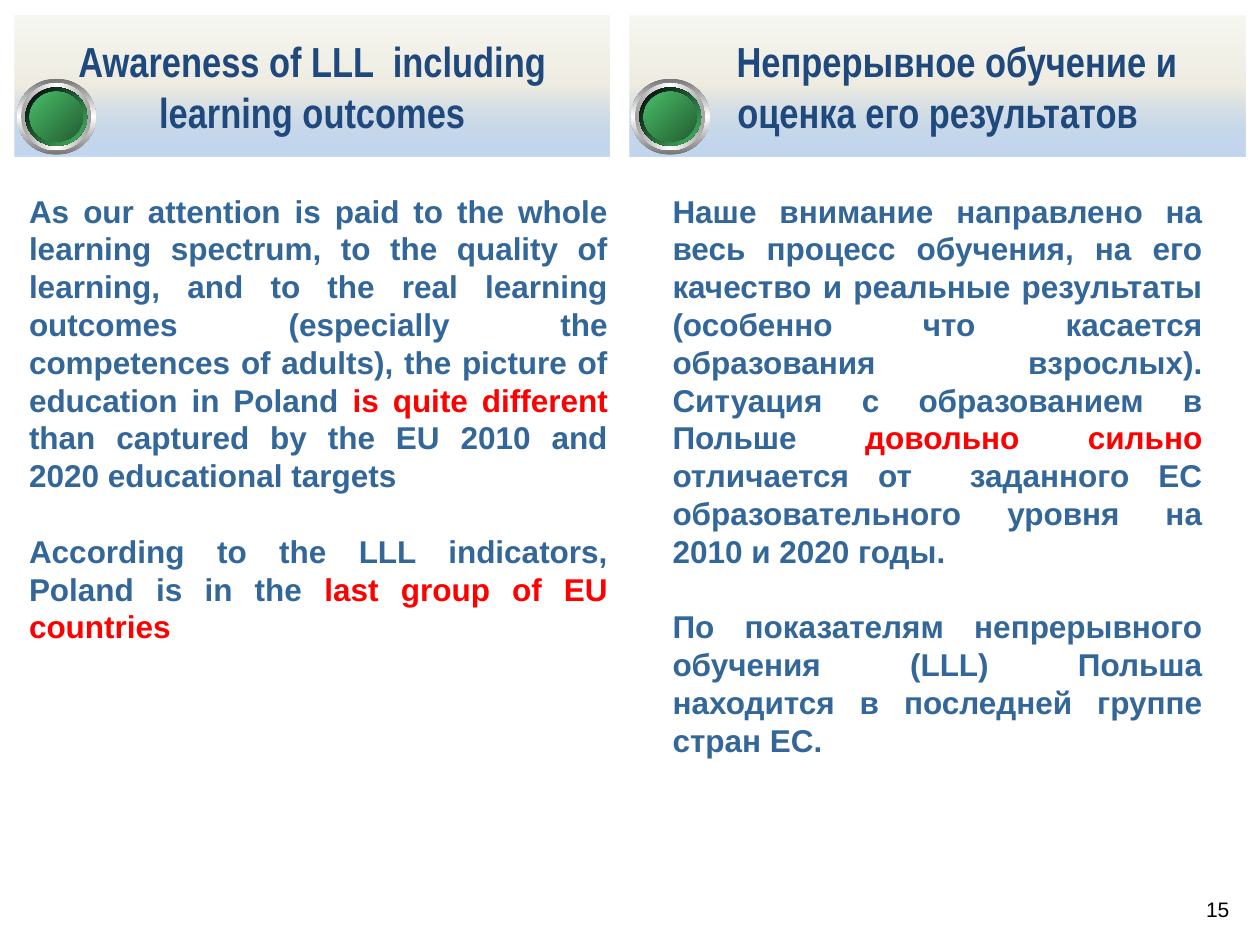
from lxml.etree import SubElement
from pptx import Presentation
from pptx.dml.color import RGBColor
from pptx.enum.shapes import MSO_SHAPE
from pptx.enum.text import MSO_ANCHOR, MSO_AUTO_SIZE, PP_ALIGN
from pptx.oxml.ns import qn
from pptx.util import Pt

NAVY = RGBColor(0x1F, 0x49, 0x7D)
STEEL = RGBColor(0x33, 0x66, 0x99)
RED = RGBColor(0xFF, 0x00, 0x00)
BLACK = RGBColor(0x00, 0x00, 0x00)
WHITE = RGBColor(0xFF, 0xFF, 0xFF)
SKY = RGBColor(0x8B, 0xB2, 0xE2)
SAND = RGBColor(0xEE, 0xEC, 0xE1)
IVORY = RGBColor(0xF7, 0xF7, 0xF2)
GREY = RGBColor(0x76, 0x76, 0x76)
SILVER = RGBColor(0xA2, 0xA2, 0xA2)
BLUE = RGBColor(0x00, 0x00, 0xFF)
DEEP_BLUE = RGBColor(0x00, 0x00, 0xC3)
GREEN = RGBColor(0x48, 0xBE, 0x67)
DARK_GREEN = RGBColor(0x23, 0x5C, 0x32)

HEADING_FONT = {"name": "Arial Narrow", "size": Pt(24), "bold": True}
BODY_FONT = {"name": "Arial", "size": Pt(18), "bold": True}
NUMBER_FONT = {"name": "Arial", "size": Pt(12), "bold": False}

BUTTON_WIDTH, BUTTON_HEIGHT = 45.2, 43.4
BUTTON_RINGS = [
    (0, [GREY, WHITE, GREY], 270),
    (2.5, [SILVER, WHITE, SILVER], 0),
    (5, [WHITE, BLUE, WHITE], 315),
    (5, [BLACK, GREEN], 315),
    (7.4, [DEEP_BLUE, BLUE, DEEP_BLUE], 45),
    (7.4, [GREEN, DARK_GREEN], 315),
]

ENGLISH = [
    [("As our attention is paid to the whole learning spectrum, to the quality of "
      "learning, and to the real learning outcomes (especially the competences of "
      "adults), the picture of education in Poland ", STEEL),
     ("is quite different", RED),
     (" than captured by the EU 2010 and 2020 educational targets", STEEL)],
    [("According to the LLL indicators, Poland is in the ", STEEL),
     ("last group of EU countries", RED)],
]
RUSSIAN = [
    [("Наше внимание направлено на весь процесс обучения, на его качество и реальные "
      "результаты (особенно что касается образования взрослых). Ситуация с "
      "образованием в Польше ", STEEL),
     ("довольно сильно", RED),
     (" отличается от  заданного ЕС образовательного уровня на 2010 и 2020 годы.",
      STEEL)],
    [("По показателям непрерывного обучения (LLL) Польша находится в последней "
      "группе стран ЕС.", STEEL)],
]


def apply_format(target, values):
    """Set every attribute named in values on target."""
    for attribute, value in values.items():
        setattr(target, attribute, value)


def fill_gradient(shape, colours, angle, first_alpha=None):
    """Fill shape with evenly spaced colours at a counter-clockwise angle."""
    shape.fill.gradient()
    shape.fill.gradient_angle = angle
    stops = shape.element.spPr.find(qn("a:gradFill")).find(qn("a:gsLst"))
    for stop in list(stops):
        stops.remove(stop)
    for index, colour in enumerate(colours):
        position = 100000 * index // (len(colours) - 1)
        stop = SubElement(stops, qn("a:gs"), pos=str(position))
        tint = SubElement(stop, qn("a:srgbClr"), val=str(colour))
        if first_alpha and index == 0:
            SubElement(tint, qn("a:alpha"), val=str(first_alpha * 1000))


def write_text(shape, paragraphs, font, alignment, anchor, gap=0):
    """Write paragraphs of coloured runs, with a gap between paragraphs."""
    frame = shape.text_frame
    apply_format(frame, {"word_wrap": True, "auto_size": MSO_AUTO_SIZE.NONE,
                         "vertical_anchor": anchor})
    for index, runs in enumerate(paragraphs):
        paragraph = frame.add_paragraph() if index else frame.paragraphs[0]
        apply_format(paragraph, {"alignment": alignment,
                                 "space_before": Pt(gap if index else 0)})
        for words, colour in runs:
            run = paragraph.add_run()
            run.text = words
            apply_format(run.font, font)
            run.font.color.rgb = colour


def format_heading(banner, words):
    """Give a heading banner its gradient and centred text."""
    fill_gradient(banner, [SKY, SAND, IVORY], 90, first_alpha=52)
    banner.line.fill.background()
    write_text(banner, [[(words, NAVY)]], HEADING_FONT, PP_ALIGN.CENTER,
               MSO_ANCHOR.MIDDLE)


def add_text(slide, box, *text_format):
    """Add a text box at the given box in points."""
    write_text(slide.shapes.add_textbox(*map(Pt, box)), *text_format)


def add_button(slide, left, top):
    """Add a round button of concentric gradient rings."""
    button = slide.shapes.add_group_shape()
    for inset, colours, angle in BUTTON_RINGS:
        ring = button.shapes.add_shape(
            MSO_SHAPE.OVAL, Pt(left + inset), Pt(top + inset),
            Pt(BUTTON_WIDTH - 2 * inset), Pt(BUTTON_HEIGHT - 2 * inset))
        ring.shadow.inherit = False
        ring.line.fill.background()
        fill_gradient(ring, colours, angle)


def main():
    """Build the bilingual slide on learning outcomes."""
    deck = Presentation()
    apply_format(deck, {"slide_width": Pt(720), "slide_height": Pt(540)})
    slide = deck.slides.add_slide(deck.slide_layouts[5])

    title = slide.shapes.title
    apply_format(title, {"left": Pt(8.4), "top": Pt(9), "width": Pt(340),
                         "height": Pt(80.4)})
    format_heading(title, "Awareness of LLL  including learning outcomes")

    translated_title = slide.shapes.add_shape(
        MSO_SHAPE.RECTANGLE, Pt(360), Pt(9), Pt(351.6), Pt(80.4))
    translated_title.shadow.inherit = False
    format_heading(translated_title, "Непрерывное обучение и оценка его результатов")
    first_line = translated_title.text_frame.paragraphs[0]
    first_line._p.get_or_add_pPr().set("indent", str(Pt(22)))

    for left in (9.6, 360.4):
        add_button(slide, left, 45)

    body_format = (BODY_FONT, PP_ALIGN.JUSTIFY, MSO_ANCHOR.TOP, 21.6)
    add_text(slide, (9.5, 106, 345, 269), ENGLISH, *body_format)
    add_text(slide, (377.2, 106, 317, 334), RUSSIAN, *body_format)
    add_text(slide, (674.6, 508.5, 42.5, 22), [[("15", BLACK)]], NUMBER_FONT,
             PP_ALIGN.CENTER, MSO_ANCHOR.MIDDLE)
    deck.save("out.pptx")


if __name__ == "__main__":
    main()
